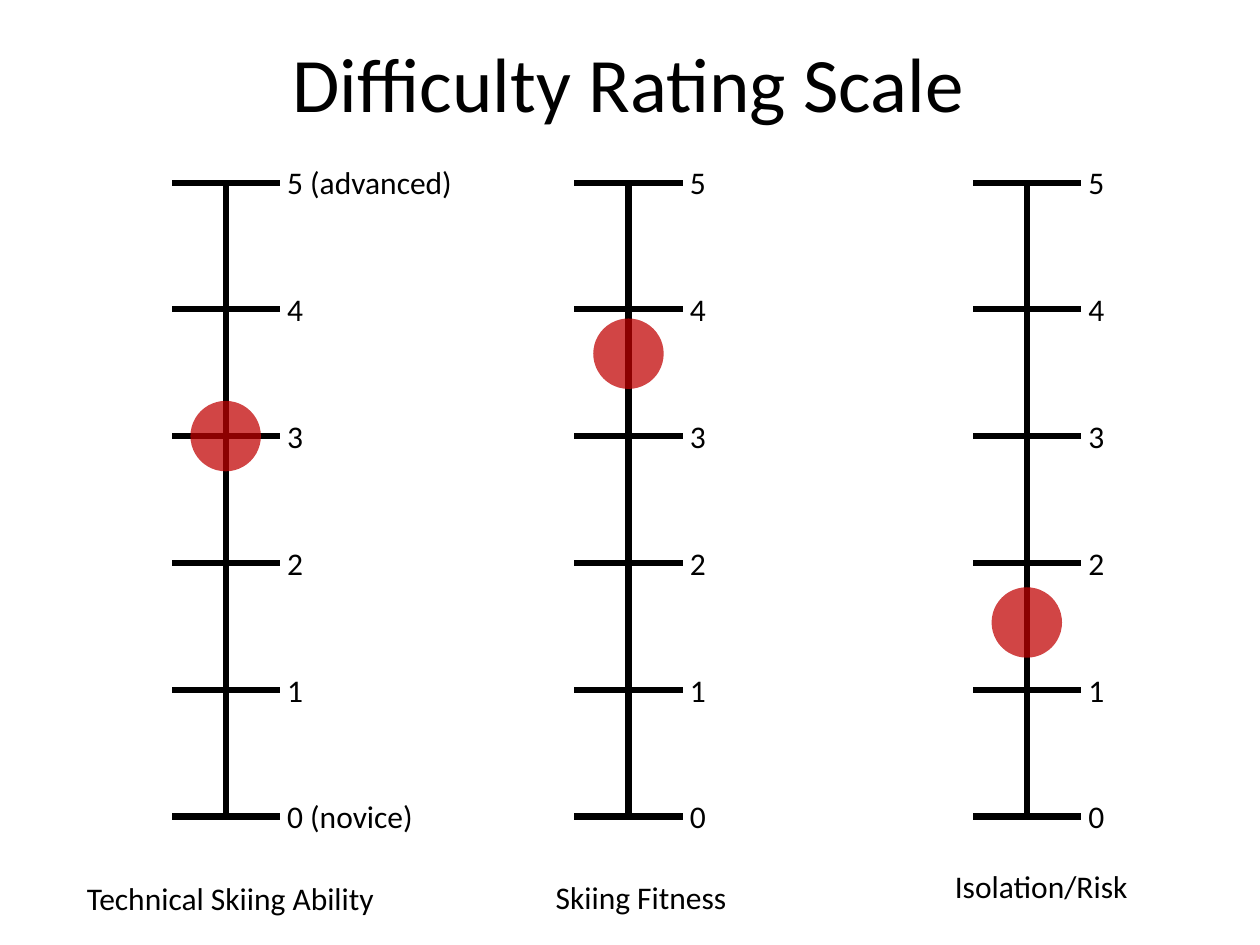
import dataclasses

import lxml.etree
import pptx
import pptx.dml.color
import pptx.enum.shapes
import pptx.enum.text
import pptx.oxml.ns
import pptx.util

Cm = pptx.util.Cm
Pt = pptx.util.Pt
Align = pptx.enum.text.PP_ALIGN
qn = pptx.oxml.ns.qn


@dataclasses.dataclass
class Theme:
    ink: str = "000000"
    mark: str = "C00000"
    alpha: int = 73
    font: str = "Calibri"
    title: int = 44
    body: int = 18
    line: float = 3.5


# Scale geometry, in cm
TOP, BASE, STEPS = 3.68, 16.46, 5
STEP = (BASE - TOP) / STEPS
HALF = 1.09
DOT = 1.42
ROW = 1.02


def level(value):
    """Height on the slide of a rating."""
    return BASE - value * STEP


class Deck:
    def __init__(self, theme):
        self.theme = theme
        self.file = pptx.Presentation()
        self.file.slide_width = Cm(25.4)
        self.file.slide_height = Cm(19.05)
        self.slide = self.file.slides.add_slide(self.file.slide_layouts[5])

    def color(self, name):
        return pptx.dml.color.RGBColor.from_string(name)

    def style(self, para, size, align):
        para.alignment = align
        para.font.name = self.theme.font
        para.font.size = Pt(size)
        para.font.color.rgb = self.color(self.theme.ink)

    def title(self, text, left, top, width, height):
        box = self.slide.shapes.title
        box.left, box.top = Cm(left), Cm(top)
        box.width, box.height = Cm(width), Cm(height)
        frame = box.text_frame
        frame.text = text
        frame.vertical_anchor = pptx.enum.text.MSO_ANCHOR.MIDDLE
        self.style(frame.paragraphs[0], self.theme.title, Align.CENTER)

    def text(self, home, text, left, top, width, align=Align.LEFT):
        box = home.add_textbox(Cm(left), Cm(top), Cm(width), Cm(ROW))
        frame = box.text_frame
        frame.word_wrap = True
        frame.auto_size = pptx.enum.text.MSO_AUTO_SIZE.SHAPE_TO_FIT_TEXT
        frame.text = text
        self.style(frame.paragraphs[0], self.theme.body, align)

    def line(self, home, x1, y1, x2, y2):
        line = home.add_connector(
            pptx.enum.shapes.MSO_CONNECTOR.STRAIGHT,
            Cm(x1), Cm(y1), Cm(x2), Cm(y2))
        line.line.color.rgb = self.color(self.theme.ink)
        line.line.width = Pt(self.theme.line)
        lxml.etree.SubElement(line.element.spPr, qn("a:effectLst"))

    def scale(self, x, notes):
        """Axis with one tick and label per rating."""
        home = self.slide.shapes.add_group_shape().shapes
        self.line(home, x, TOP, x, BASE - 0.08)
        for value in range(STEPS, -1, -1):
            y = level(value)
            self.line(home, x + HALF, y, x - HALF, y)
            note, width = notes.get(value, ("", 0.84))
            self.text(home, f"{value}{note}", x + 0.99, y - ROW / 2, width)

    def dot(self, x, value):
        """See-through marker at a rating."""
        dot = self.slide.shapes.add_shape(
            pptx.enum.shapes.MSO_SHAPE.OVAL,
            Cm(x - DOT / 2), Cm(level(value) - DOT / 2), Cm(DOT), Cm(DOT))
        dot.shadow.inherit = False
        dot.line.fill.background()
        dot.fill.solid()
        dot.fill.fore_color.rgb = self.color(self.theme.mark)
        tint = dot.element.spPr.find(qn("a:solidFill"))[0]
        alpha = lxml.etree.SubElement(tint, qn("a:alpha"))
        alpha.set("val", str(self.theme.alpha * 1000))

    def save(self):
        self.file.save("out.pptx")


def main():
    deck = Deck(Theme())
    deck.title("Difficulty Rating Scale", 1.24, 0.05, 22.86, 3.18)

    # Axis x, end notes, rating, then caption: text, left, top, width, align
    ends = {5: (" (advanced)", 4.19), 0: (" (novice)", 3.56)}
    scales = [
        (4.55, ends, 3,
         ("Technical Skiing Ability", 1.5, 17.6, 6.96, Align.LEFT)),
        (12.67, {}, 3.65,
         ("Skiing Fitness", 10.46, 17.58, 4.93, Align.CENTER)),
        (20.7, {}, 1.53,
         ("Isolation/Risk", 19, 17.35, 4.93, Align.LEFT)),
    ]
    for x, notes, value, caption in scales:
        deck.scale(x, notes)
        deck.dot(x, value)
        deck.text(deck.slide.shapes, *caption)
    deck.save()


if __name__ == "__main__":
    main()
